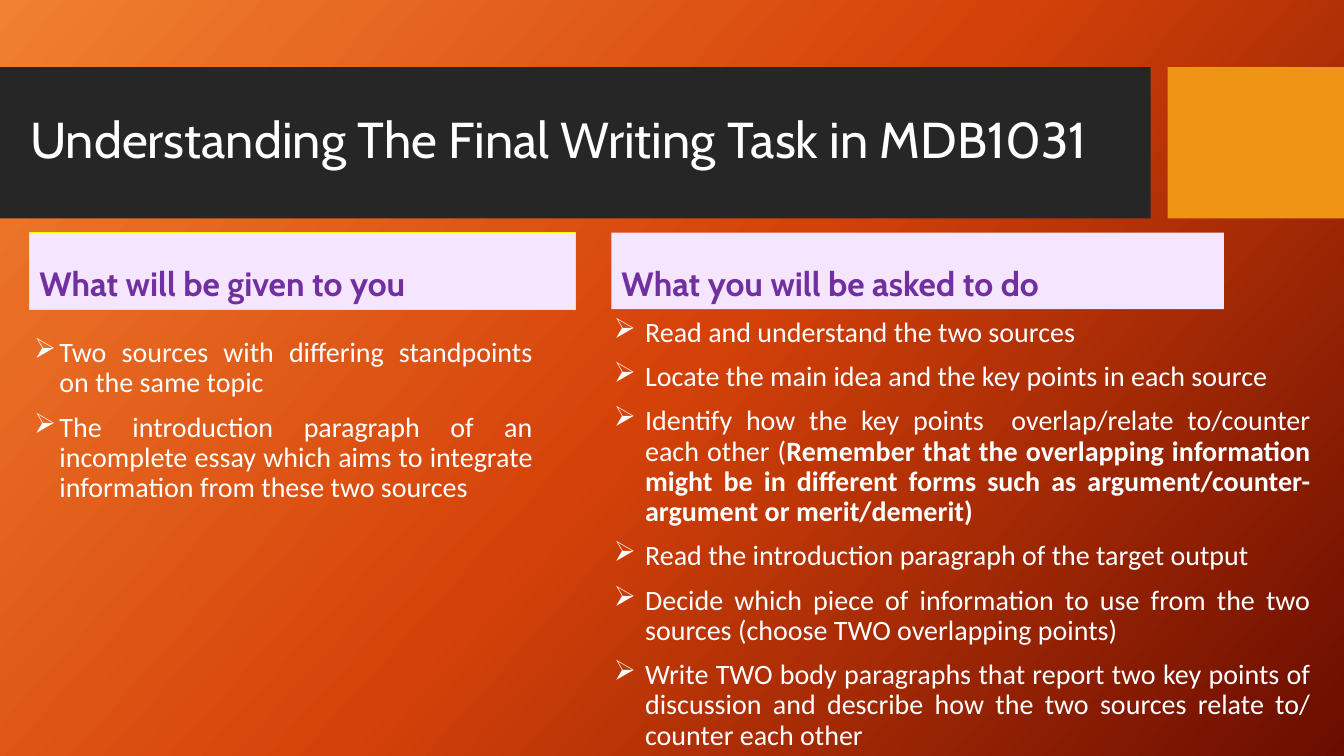
from copy import deepcopy
from dataclasses import dataclass

from lxml import etree
from pptx import Presentation
from pptx.dml.color import RGBColor
from pptx.enum.shapes import MSO_SHAPE
from pptx.enum.text import MSO_ANCHOR, PP_ALIGN
from pptx.oxml.ns import qn
from pptx.util import Inches, Pt

RECT = MSO_SHAPE.RECTANGLE
TOP, MIDDLE, BOTTOM = MSO_ANCHOR.TOP, MSO_ANCHOR.MIDDLE, MSO_ANCHOR.BOTTOM
LEFT, JUSTIFY = PP_ALIGN.LEFT, PP_ALIGN.JUSTIFY
COLS, ROWS = 160, 90


@dataclass(frozen=True)
class Theme:
    glow: tuple = ((0, "F18031"), (0.5, "D54209"), (1, "6A0D00"))
    angle: int = 42
    band: str = "262626"
    accent: str = "F09415"
    panel: str = "F6E5FE"
    edge: str = "FFFF00"
    title: tuple = ("Cabin", 36, "FFFFFF", False)
    head: tuple = ("Cabin", 24, "7030A0", True)
    body: tuple = ("Calibri", 20, "FFFFFF", False)
    gap: int = 10
    lead: float = 0.9
    mark: str = "➢"


def assign(target, values):
    for name, value in values.items():
        setattr(target, name, value)


class Deck:
    def __init__(self, theme):
        self.theme = theme
        self.show = Presentation()
        assign(self.show, {"slide_width": Inches(13.333), "slide_height": Inches(7.5)})
        self.slide = self.show.slides.add_slide(self.show.slide_layouts[5])

    def place(self, left, top, width, height):
        col = self.show.slide_width / COLS
        row = self.show.slide_height / ROWS
        return [round(n) for n in (left * col, top * row, width * col, height * row)]

    def backdrop(self):
        fill = self.slide.background.fill
        fill.gradient()
        stops = next(self.slide.element.iter(qn("a:gsLst")))
        stops.insert(1, deepcopy(stops[0]))
        for stop, (share, color) in zip(fill.gradient_stops, self.theme.glow):
            stop.position = share
            stop.color.rgb = RGBColor.from_string(color)
        fill.gradient_angle = 360 - self.theme.angle

    def block(self, area, color, edge=None):
        shape = self.slide.shapes.add_shape(RECT, *self.place(*area))
        shape.shadow.inherit = False
        shape.fill.solid()
        shape.fill.fore_color.rgb = RGBColor.from_string(color)
        if edge:
            shape.line.color.rgb = RGBColor.from_string(edge)
            shape.line.width = Pt(0.75)
        else:
            shape.line.fill.background()
        return shape

    def typeset(self, frame, items, style, anchor, align=LEFT, indent=0):
        face, size, color, bold = style
        assign(frame, {"word_wrap": True, "vertical_anchor": anchor})
        for index, item in enumerate(items):
            para = frame.paragraphs[0] if index == 0 else frame.add_paragraph()
            assign(para, {
                "alignment": align,
                "line_spacing": self.theme.lead,
                "space_before": Pt(self.theme.gap if index else 0),
            })
            if indent:
                self.bullet(para, indent)
            for part, text in enumerate(item):
                run = para.add_run()
                run.text = text
                assign(run.font, {"name": face, "size": Pt(size), "bold": bold or part > 0})
                run.font.color.rgb = RGBColor.from_string(color)

    def bullet(self, para, indent):
        props = para._p.get_or_add_pPr()
        props.set("marL", str(Inches(indent)))
        props.set("indent", str(-Inches(indent)))
        etree.SubElement(props, qn("a:buChar")).set("char", self.theme.mark)

    def title(self, area, text):
        shape = self.slide.shapes.title
        shape.element.getparent().append(shape.element)
        assign(shape, dict(zip(("left", "top", "width", "height"), self.place(*area))))
        self.typeset(shape.text_frame, [(text,)], self.theme.title, MIDDLE)

    def head(self, area, text, edge=None):
        shape = self.block(area, self.theme.panel, edge)
        self.typeset(shape.text_frame, [(text,)], self.theme.head, BOTTOM)

    def points(self, area, items, indent):
        box = self.slide.shapes.add_textbox(*self.place(*area))
        self.typeset(box.text_frame, items, self.theme.body, TOP, JUSTIFY, indent)


GIVEN = [
    ("Two sources with differing standpoints on the same topic",),
    ("The introduction paragraph of an incomplete essay which aims to integrate "
     "information from these two sources",),
]
ASKED = [
    ("Read and understand the two sources",),
    ("Locate the main idea and the key points in each source",),
    ("Identify how the key points  overlap/relate to/counter each other (",
     "Remember that the overlapping information might be in different forms "
     "such as argument/counter-argument or merit/demerit)"),
    ("Read the introduction paragraph of the target output",),
    ("Decide which piece of information to use from the two sources "
     "(choose TWO overlapping points)",),
    ("Write TWO body paragraphs that report two key points of discussion and "
     "describe how the two sources relate to/ counter each other",),
]


def main():
    theme = Theme()
    deck = Deck(theme)
    deck.backdrop()
    deck.block((0, 8, 137, 18), theme.band)
    deck.block((139, 8, 21, 18), theme.accent)
    deck.title((2.4, 9.8, 134.3, 14.2), "Understanding The Final Writing Task in MDB1031")
    deck.head((3.5, 27.7, 65, 9.1), "What will be given to you", theme.edge)
    deck.points((2.9, 39.7, 61.7, 42.2), GIVEN, 0.25)
    deck.head((72.8, 27.7, 72.9, 9.1), "What you will be asked to do")
    deck.points((71.9, 37.3, 85.3, 50.3), ASKED, 0.31)
    deck.show.save("out.pptx")


if __name__ == "__main__":
    main()
